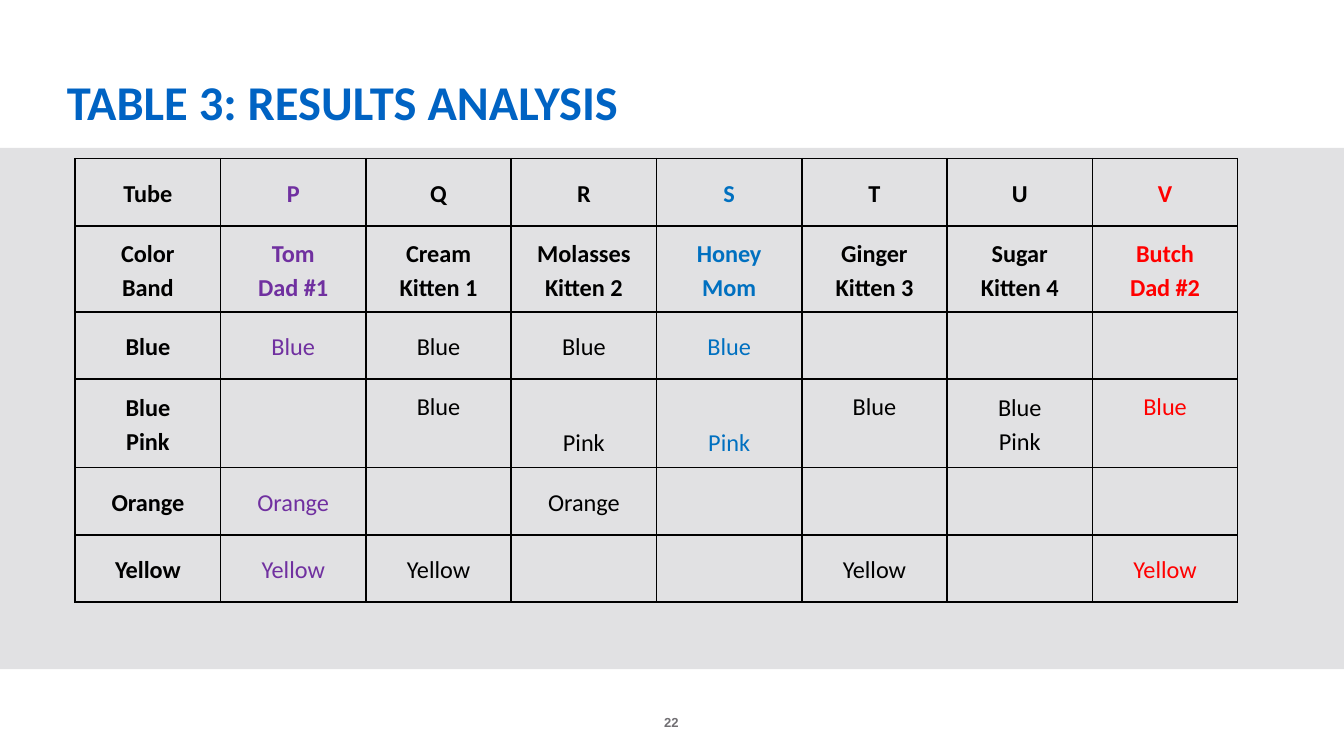
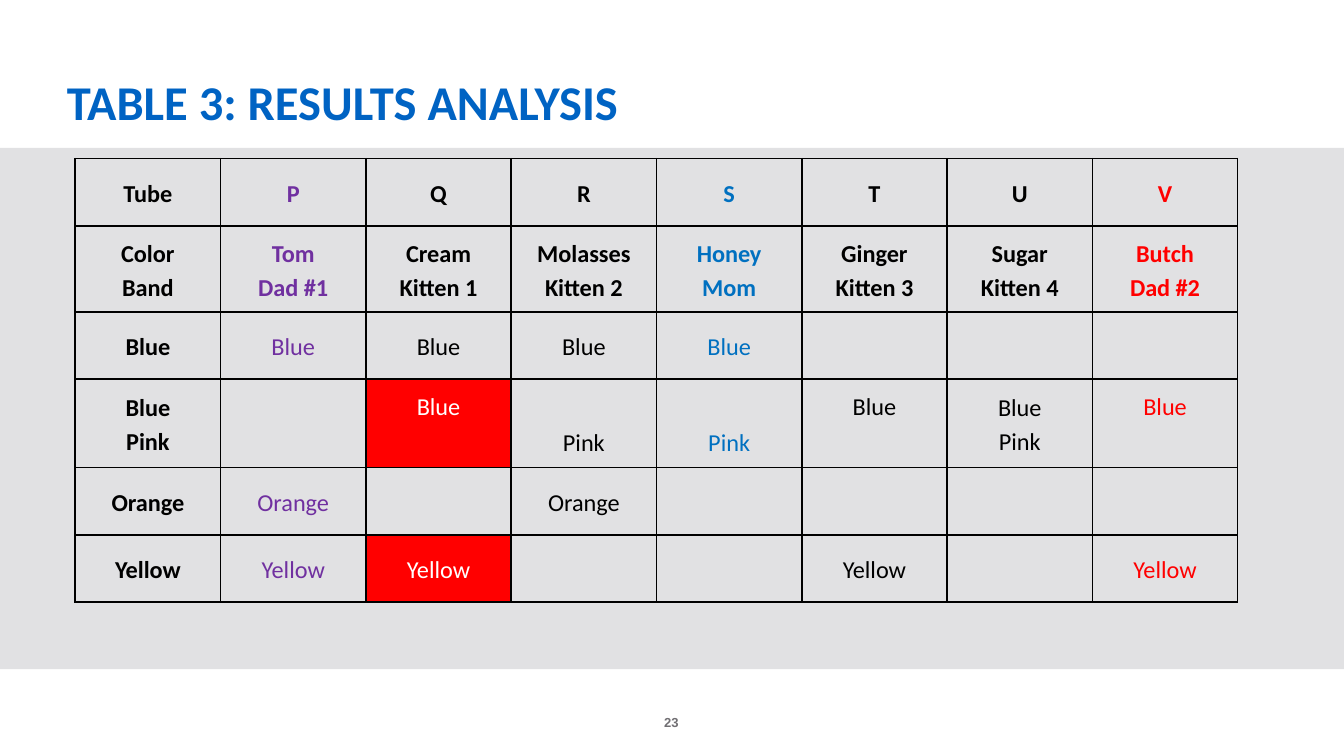
from dataclasses import dataclass

from lxml.etree import SubElement
from pptx import Presentation
from pptx.dml.color import RGBColor
from pptx.enum.shapes import MSO_SHAPE
from pptx.enum.text import MSO_ANCHOR, PP_ALIGN
from pptx.oxml.ns import qn
from pptx.slide import Slide
from pptx.table import _Cell
from pptx.text.text import TextFrame
from pptx.util import Inches, Pt

WHITE = RGBColor(0xFF, 0xFF, 0xFF)
BLACK = RGBColor(0x00, 0x00, 0x00)
RED = RGBColor(0xFF, 0x00, 0x00)
PURPLE = RGBColor(0x70, 0x30, 0xA0)
BLUE = RGBColor(0x00, 0x70, 0xC0)
TITLE_BLUE = RGBColor(0x00, 0x63, 0xC3)
BAND_GRAY = RGBColor(0xE1, 0xE1, 0xE3)
NUMBER_GRAY = RGBColor(0x71, 0x6F, 0x73)

SLIDE_WIDTH = Inches(10)
SLIDE_HEIGHT = SLIDE_WIDTH * 9 // 16
TABLE_WIDTH = Inches(8.65)
CELL_MARGIN = Inches(0.07)
ROW_HEIGHTS = [Inches(height) for height in (0.5, 0.64, 0.5, 0.66, 0.5, 0.5)]
HEADER_ROWS = 2
PARENT_COLORS = {1: PURPLE, 4: BLUE, 7: RED}

RESULTS = [
    ["Tube", "P", "Q", "R", "S", "T", "U", "V"],
    ["Color\nBand", "Tom\nDad #1", "Cream\nKitten 1", "Molasses\nKitten 2",
     "Honey\nMom", "Ginger\nKitten 3", "Sugar\nKitten 4", "Butch\nDad #2"],
    ["Blue", "Blue", "Blue", "Blue", "Blue", "", "", ""],
    ["Blue\nPink", "", "Blue", "Pink", "Pink", "Blue", "Blue\nPink", "Blue"],
    ["Orange", "Orange", "", "Orange", "", "", "", ""],
    ["Yellow", "Yellow", "Yellow", "", "", "Yellow", "", "Yellow"],
]


@dataclass(frozen=True)
class ResultsSlide:
    """A results slide with its number and its highlighted cells."""

    number: int
    highlights: frozenset[tuple[int, int]] = frozenset()


RESULTS_SLIDES = [
    ResultsSlide(22),
    ResultsSlide(23, frozenset({(3, 2), (5, 2)})),
]


def write_text(text_frame: TextFrame, text: str, *, size: float, color: RGBColor,
               font: str = "Calibri", bold: bool = True,
               align: PP_ALIGN = PP_ALIGN.CENTER, line_spacing: float = 1.0) -> None:
    """Write each line of the text as a formatted paragraph."""
    text_frame.word_wrap = True
    text_frame.text = text
    for paragraph in text_frame.paragraphs:
        paragraph.alignment = align
        paragraph.line_spacing = line_spacing
        paragraph.font.name = font
        paragraph.font.size = Pt(size)
        paragraph.font.bold = bold
        paragraph.font.color.rgb = color


def add_text_box(slide: Slide, left: float, top: float, width: float, height: float,
                 *, side_margin: float = 0, end_margin: float = 0) -> TextFrame:
    """Add a bottom-anchored text box and return its text frame."""
    box = slide.shapes.add_textbox(Inches(left), Inches(top), Inches(width), Inches(height))
    text_frame = box.text_frame
    text_frame.vertical_anchor = MSO_ANCHOR.BOTTOM
    text_frame.margin_left = text_frame.margin_right = Inches(side_margin)
    text_frame.margin_top = text_frame.margin_bottom = Inches(end_margin)
    return text_frame


def add_frame(slide: Slide, number: int) -> None:
    """Draw the slide number, the gray band and the title."""
    number_frame = add_text_box(slide, 4.54, 5.13, 0.91, 0.3)
    write_text(number_frame, str(number), size=7, color=NUMBER_GRAY, font="Arial")
    band = slide.shapes.add_shape(MSO_SHAPE.RECTANGLE, Inches(0), Inches(1.1),
                                  SLIDE_WIDTH, Inches(3.88))
    band.shadow.inherit = False
    band.fill.solid()
    band.fill.fore_color.rgb = BAND_GRAY
    band.line.fill.background()
    title_frame = add_text_box(slide, 0.4, 0.48, 9.2, 0.54, side_margin=0.1, end_margin=0.05)
    write_text(title_frame, "TABLE 3: RESULTS ANALYSIS", size=26, color=TITLE_BLUE,
               align=PP_ALIGN.LEFT)


def add_borders(cell: _Cell) -> None:
    """Give all four sides of a cell a thin black line."""
    properties = cell._tc.get_or_add_tcPr()
    for position, side in enumerate(("a:lnL", "a:lnR", "a:lnT", "a:lnB")):
        line = SubElement(properties, qn(side), w=str(Pt(1)))
        fill = SubElement(line, qn("a:solidFill"))
        SubElement(fill, qn("a:srgbClr"), val=str(BLACK))
        properties.insert(position, line)


def find_anchor(text: str, band_names: str) -> MSO_ANCHOR:
    """Line a single band up with its name in a two-band row."""
    names = band_names.split("\n")
    if len(names) == 1 or text not in names:
        return MSO_ANCHOR.MIDDLE
    return MSO_ANCHOR.TOP if text == names[0] else MSO_ANCHOR.BOTTOM


def format_cell(cell: _Cell, row: int, column: int, highlighted: bool) -> None:
    """Fill in one result and style it by its row and column."""
    text = RESULTS[row][column]
    cell.margin_left = cell.margin_right = CELL_MARGIN
    cell.margin_top = cell.margin_bottom = CELL_MARGIN
    cell.vertical_anchor = find_anchor(text, RESULTS[row][0])
    color = PARENT_COLORS.get(column, BLACK)
    if highlighted:
        color = WHITE
        cell.fill.solid()
        cell.fill.fore_color.rgb = RED
    else:
        cell.fill.background()
    add_borders(cell)
    if text:
        write_text(cell.text_frame, text, size=13, color=color,
                   bold=row < HEADER_ROWS or column == 0, line_spacing=1.15)


def add_results_table(slide: Slide, highlights: frozenset[tuple[int, int]]) -> None:
    """Draw the table of color bands for each tube."""
    table = slide.shapes.add_table(len(RESULTS), len(RESULTS[0]), Inches(0.56), Inches(1.18),
                                   TABLE_WIDTH, sum(ROW_HEIGHTS)).table
    table.first_row = False
    table.horz_banding = False
    for row, height in enumerate(ROW_HEIGHTS):
        table.rows[row].height = height
        for column in range(len(RESULTS[row])):
            format_cell(table.cell(row, column), row, column, (row, column) in highlights)


def main() -> None:
    """Build and save the presentation."""
    presentation = Presentation()
    presentation.slide_width = SLIDE_WIDTH
    presentation.slide_height = SLIDE_HEIGHT
    for results_slide in RESULTS_SLIDES:
        slide = presentation.slides.add_slide(presentation.slide_layouts[6])
        add_frame(slide, results_slide.number)
        add_results_table(slide, results_slide.highlights)
    presentation.save("out.pptx")


if __name__ == "__main__":
    main()
